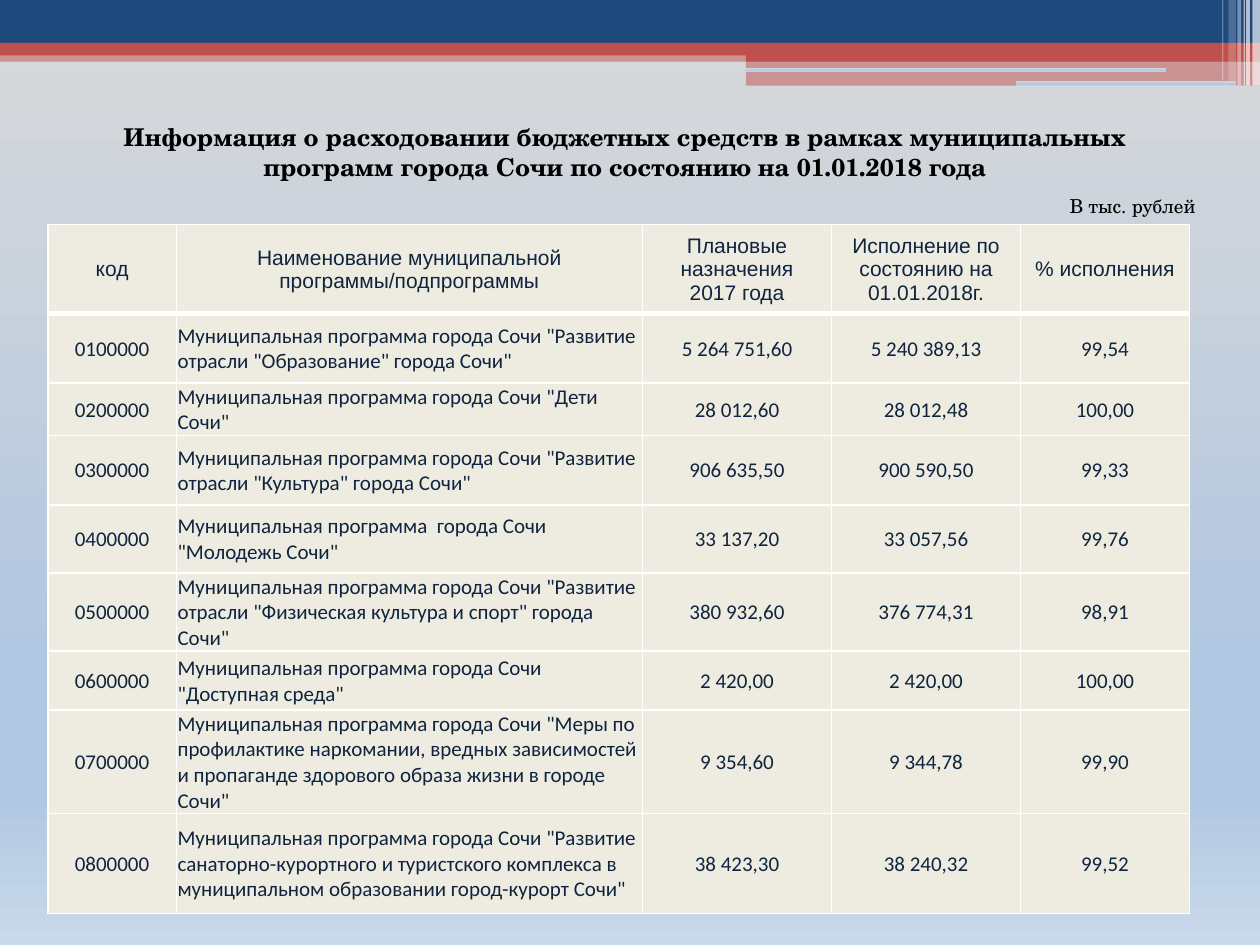
import dataclasses

import lxml.etree
import pptx
import pptx.dml.color
import pptx.enum.shapes
import pptx.enum.text
import pptx.oxml.ns
import pptx.util

Inches = pptx.util.Inches
qn = pptx.oxml.ns.qn
Align = pptx.enum.text.PP_ALIGN
Anchor = pptx.enum.text.MSO_ANCHOR
Shape = pptx.enum.shapes.MSO_SHAPE


@dataclasses.dataclass(frozen=True)
class Theme:
    """Colours, fonts and type sizes of the slide."""
    navy: str = "1F497D"
    red: str = "C0504D"
    white: str = "FFFFFF"
    cream: str = "EEECE1"
    ink: str = "0F243E"
    black: str = "000000"
    sky: tuple = ((0, "D9D9D9"), (74, "B0C6E1"), (83, "B0C6E1"), (100, "CAD9EB"))
    serif: str = "TeX Gyre Schola"
    sans: str = "Arial"
    body: str = "Calibri"
    title: int = 14
    note: int = 11
    cell: int = 12


THEME = Theme()

HEADS = ["код", "Наименование муниципальной программы/подпрограммы",
         "Плановые\vназначения\v2017 года",
         "Исполнение по состоянию на 01.01.2018г.", "% исполнения"]
ROWS = [
    ("0100000", 'Муниципальная программа города Сочи "Развитие отрасли "Образование" города Сочи"',
     "5 264 751,60", "5 240 389,13", "99,54"),
    ("0200000", 'Муниципальная программа города Сочи "Дети Сочи"',
     "28 012,60", "28 012,48", "100,00"),
    ("0300000", 'Муниципальная программа города Сочи "Развитие отрасли "Культура" города Сочи"',
     "906 635,50", "900 590,50", "99,33"),
    ("0400000", 'Муниципальная программа  города Сочи "Молодежь Сочи"',
     "33 137,20", "33 057,56", "99,76"),
    ("0500000", 'Муниципальная программа города Сочи "Развитие отрасли '
     '"Физическая культура и спорт" города Сочи"',
     "380 932,60", "376 774,31", "98,91"),
    ("0600000", 'Муниципальная программа города Сочи "Доступная среда"',
     "2 420,00", "2 420,00", "100,00"),
    ("0700000", 'Муниципальная программа города Сочи "Меры по профилактике наркомании, '
     'вредных зависимостей и пропаганде здорового образа жизни в городе Сочи"',
     "9 354,60", "9 344,78", "99,90"),
    ("0800000", 'Муниципальная программа города Сочи "Развитие санаторно-курортного и '
     'туристского комплекса в муниципальном образовании город-курорт Сочи"',
     "38 423,30", "38 240,32", "99,52"),
]
WIDTHS = [1.02, 3.7, 1.5, 1.5, 1.34]
HEIGHTS = [0.71, 0.55, 0.41, 0.55, 0.54, 0.62, 0.47, 0.82, 0.79]


def write(frame, text, font=THEME.body, size=THEME.cell, color=THEME.ink,
          bold=False, align=Align.CENTER):
    """Put formatted text into a text frame."""
    frame.word_wrap = True
    frame.text = text
    para = frame.paragraphs[0]
    para.alignment = align
    for run in para.runs:
        run.font.name = font
        run.font.size = pptx.util.Pt(size)
        run.font.bold = bold
        run.font.color.rgb = pptx.dml.color.RGBColor.from_string(color)


def paint(fill, color, alpha=100):
    """Give a fill one colour, with its opacity in percent."""
    fill.solid()
    fill.fore_color.rgb = pptx.dml.color.RGBColor.from_string(color)
    return str(alpha * 1000)


def blend(fill, root):
    """Give a fill the sky gradient, from top to bottom."""
    fill.gradient()
    fill.gradient_angle = 270
    stops = next(root.iter(qn("a:gsLst")))
    for stop in list(stops):
        stops.remove(stop)
    for place, color in THEME.sky:
        stop = lxml.etree.SubElement(stops, qn("a:gs"), pos=str(place * 1000))
        lxml.etree.SubElement(stop, qn("a:srgbClr"), val=color)


def add_bar(slide, box, color=None, alpha=100):
    """Add a bar of one colour, or a rounded sky bar if none is given."""
    kind = Shape.RECTANGLE if color else Shape.ROUNDED_RECTANGLE
    bar = slide.shapes.add_shape(kind, *map(Inches, box))
    bar.shadow.inherit = False
    bar.line.fill.background()
    if not color:
        blend(bar.fill, bar.element)
        return
    value = paint(bar.fill, color, alpha)
    if alpha < 100:
        tint = next(bar.element.spPr.iter(qn("a:srgbClr")))
        lxml.etree.SubElement(tint, qn("a:alpha"), val=value)


def add_band(slide, left, top, width):
    """Draw the header band with its steps and stripes."""
    half = left + 5.92
    rest = width - 5.92
    add_bar(slide, (left, top + 0.4, width, 0.09), THEME.red, 50)
    add_bar(slide, (left, top, width, 0.34), THEME.navy)
    add_bar(slide, (left, top + 0.34, width, 0.1), THEME.red)
    add_bar(slide, (half, top + 0.39, rest, 0.1), THEME.red)
    add_bar(slide, (half, top + 0.48, rest, 0.2), THEME.red, 50)
    add_bar(slide, (half - 0.01, top + 0.54, 3.35, 0.03))
    add_bar(slide, (left + 8.06, top + 0.64, 1.75, 0.04))
    stripes = [(0.06, 0.06, 0.68, 65), (0.11, 0.03, 0.68, 65), (0.13, 0.01, 0.68, 60),
               (0.18, 0.03, 0.68, 40), (0.25, 0.06, 0.64, 20), (0.3, 0.01, 0.64, 30)]
    for back, thick, tall, alpha in stripes:
        add_bar(slide, (left + width - back, top, thick, tall), THEME.white, alpha)


def add_title(slide, left, top, width, height):
    """Place the title and the note on units below it."""
    title = slide.shapes.title
    title.left, title.top, title.width, title.height = map(
        Inches, (left, top, width, height))
    frame = title.text_frame
    frame.auto_size = pptx.enum.text.MSO_AUTO_SIZE.NONE
    frame.vertical_anchor = Anchor.TOP
    write(frame, "Информация о расходовании бюджетных средств в рамках муниципальных "
          "программ города Сочи по состоянию на 01.01.2018 года",
          font=THEME.serif, size=THEME.title, color=THEME.black, bold=True)
    note = slide.shapes.add_textbox(
        *map(Inches, (left + 7.88, top + height, 1.57, 0.29)))
    write(note.text_frame, "В тыс. рублей", font=THEME.serif, size=THEME.note,
          color=THEME.black, align=Align.LEFT)


def edge(cell, **sides):
    """Draw white cell borders, with widths in points by side."""
    props = cell._tc.get_or_add_tcPr()
    for side, width in sides.items():
        line = lxml.etree.SubElement(
            props, qn("a:ln" + side), w=str(pptx.util.Pt(width)))
        solid = lxml.etree.SubElement(line, qn("a:solidFill"))
        lxml.etree.SubElement(solid, qn("a:srgbClr"), val=THEME.white)


def add_grid(slide, left, top):
    """Build the table of programme spending."""
    box = map(Inches, (left, top, sum(WIDTHS), sum(HEIGHTS)))
    grid = slide.shapes.add_table(len(HEIGHTS), len(WIDTHS), *box).table
    grid.first_row = grid.horz_banding = False
    for col, width in zip(grid.columns, WIDTHS):
        col.width = Inches(width)
    for row, height in zip(grid.rows, HEIGHTS):
        row.height = Inches(height)
    for i, texts in enumerate([HEADS, *ROWS]):
        for j, text in enumerate(texts):
            cell = grid.cell(i, j)
            cell.margin_left = cell.margin_right = cell.margin_top = Inches(0.01)
            cell.margin_bottom = 0
            cell.vertical_anchor = Anchor.TOP if (i, j) == (2, 1) else Anchor.MIDDLE
            edge(cell, L=1, R=1, T=3 if i == 1 else 1, B=3 if i == 0 else 1)
            paint(cell.fill, THEME.cream)
            write(cell.text_frame, text, font=THEME.body if i else THEME.sans,
                  align=Align.LEFT if i and j == 1 else Align.CENTER)


def main():
    """Build the slide and save it."""
    deck = pptx.Presentation()
    deck.slide_width, deck.slide_height = Inches(10), Inches(7.5)
    slide = deck.slides.add_slide(deck.slide_layouts.get_by_name("Title Only"))
    blend(slide.background.fill, slide.element)
    add_band(slide, 0, 0, 10)
    add_grid(slide, 0.38, 1.78)
    add_title(slide, 0.51, 0.92, 8.9, 0.57)
    deck.save("out.pptx")


if __name__ == "__main__":
    main()
